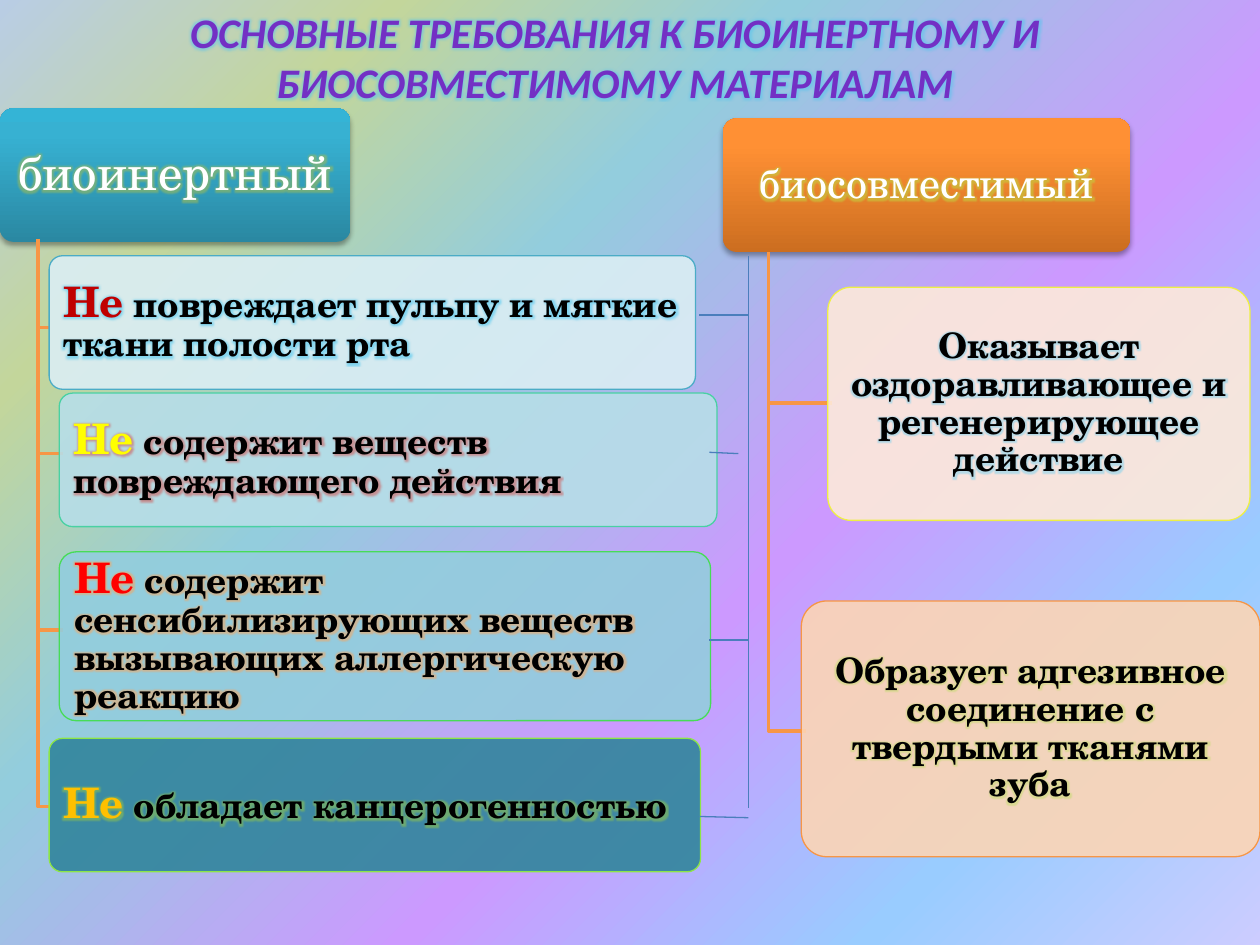
from lxml.etree import SubElement
from pptx import Presentation
from pptx.dml.color import RGBColor
from pptx.enum.shapes import MSO_CONNECTOR as Link, MSO_SHAPE as Shape
from pptx.enum.text import MSO_ANCHOR as Anchor, MSO_AUTO_SIZE as AutoSize, PP_ALIGN as Align
from pptx.oxml.ns import qn
from pptx.util import Inches, Pt

COLORS = {
    "title": "7330C4", "title_glow": "5BC4EE", "white": "FFFFFF", "black": "000000",
    "tree": "F79646", "bracket": "4B7EBC",
}
BACKDROP = [(0, "B9CDE5"), (18, "C3D69B"), (36, "93CDDD"),
            (61, "CC99FF"), (82, "99CCFF"), (100, "CCCCFF")]
TITLE = "ОСНОВНЫЕ ТРЕБОВАНИЯ К БИОИНЕРТНОМУ И БИОСОВМЕСТИМОМУ МАТЕРИАЛАМ"
SERIF, SANS = "TeX Gyre Schola", "Calibri"
COLUMNS, ROWS = 100, 75
CELL = Inches(10) / COLUMNS

BRANCHES = [
    {"name": "биоинертный", "size": 28, "at": (0, 8.6, 27.8, 10.6), "glow": "9BBB59",
     "ramp": [(0, "2A88A2"), (80, "37B1D2"), (100, "34B4D6")],
     "spine": 2.8, "align": Align.LEFT, "inset": 0.8,
     "items": [
         {"at": (3.9, 20.3, 51.3, 10.6), "fill": "DBEEF4", "line": "4BACC6", "glow": "4FC8F0",
          "lead": "C00000", "text": " повреждает пульпу и мягкие ткани полости рта"},
         {"at": (4.7, 31.2, 52.2, 10.6), "fill": "B7DEE8", "line": "49D1A3", "glow": "D0605E",
          "lead": "FFFF00", "text": " содержит веществ повреждающего действия"},
         {"at": (4.7, 43.8, 51.7, 13.4), "fill": "93CDDD", "line": "47DC57", "glow": "F0A868",
          "lead": "FF0000",
          "text": " содержит сенсибилизирующих веществ вызывающих аллергическую реакцию"},
         {"at": (3.9, 58.6, 51.7, 10.6), "fill": "31859C", "line": "8DE646", "glow": "8CC152",
          "lead": "FFC000", "text": " обладает канцерогенностью"},
     ]},
    {"name": "биосовместимый", "size": 24, "at": (57.4, 9.4, 32.3, 10.6), "glow": "C3D040",
     "ramp": [(0, "CC6E20"), (80, "FF9034"), (100, "FF9136")],
     "spine": 60.7, "align": Align.CENTER, "inset": 1,
     "items": [
         {"at": (65.7, 22.8, 33.5, 18.5), "fill": "FDEADA", "line": "EEEF46", "glow": "8CD4EC",
          "text": "Оказывает оздоравливающее и регенерирующее действие"},
         {"at": (63.6, 47.7, 36.4, 20.3), "fill": "FCD5B5", "line": "F79646", "glow": "CBDC78",
          "text": "Образует адгезивное соединение с твердыми тканями зуба"},
     ]},
]
BRACKET = [
    (59.4, 20.3, 59.4, 64.1), (59.4, 25, 55.5, 25), (59.4, 64.9, 55.5, 64.8),
    (58.6, 36, 56.3, 35.9), (59.4, 50.8, 56.3, 50.8),
]


def grid(*values):
    return [round(value * CELL) for value in values]


def rgb(value):
    return RGBColor.from_string(value)


def color_node(parent, value, alpha=None):
    node = SubElement(parent, qn("a:srgbClr"), val=value)
    if alpha:
        SubElement(node, qn("a:alpha"), val=str(alpha * 1000))


def set_gradient(fill, parent, stops, angle):
    fill.gradient()
    gradient = parent.find(qn("a:gradFill"))
    for child in list(gradient):
        gradient.remove(child)
    stop_list = SubElement(gradient, qn("a:gsLst"))
    for position, value in stops:
        color_node(SubElement(stop_list, qn("a:gs"), pos=str(position * 1000)), value)
    SubElement(gradient, qn("a:lin"), ang=str(angle * 60000), scaled="0")


def add_span(para, text, size, color, glow, bold=True, italic=False, face=SERIF):
    span = para.add_run()
    span.text = text
    font = span.font
    font.size, font.bold, font.italic = Pt(size), bold, italic
    font.color.rgb = rgb(color)
    effects = SubElement(font._element, qn("a:effectLst"))
    color_node(SubElement(effects, qn("a:glow"), rad=str(Pt(5))), glow, 60)
    font.name = face


def add_box(page, at, align, inset):
    box = page.shapes.add_shape(Shape.ROUNDED_RECTANGLE, *grid(*at))
    box.adjustments[0] = 0.1
    box.shadow.inherit = False
    frame = box.text_frame
    frame.word_wrap = True
    frame.vertical_anchor = Anchor.MIDDLE
    frame.margin_left, frame.margin_right = grid(inset, inset)
    frame.margin_top, frame.margin_bottom = grid(0.6, 0.6)
    para = frame.paragraphs[0]
    para.alignment, para.line_spacing = align, 0.9
    return box, para


def add_header(page, branch):
    box, para = add_box(page, branch["at"], Align.CENTER, 0.8)
    properties = box._element.spPr
    set_gradient(box.fill, properties, branch["ramp"], 270)
    box.line.fill.background()
    shadow = SubElement(properties.find(qn("a:effectLst")), qn("a:outerShdw"),
                        blurRad=str(Pt(3.1)), dist=str(Pt(1.8)), dir="5400000", rotWithShape="0")
    color_node(shadow, COLORS["black"], 35)
    add_span(para, branch["name"], branch["size"], COLORS["white"], branch["glow"], bold=False)


def add_elbow(page, spine, top, at):
    left, middle = at[0], at[1] + at[3] / 2
    builder = page.shapes.build_freeform(spine, top, scale=CELL)
    builder.add_line_segments([(spine, middle), (left, middle)], close=False)
    elbow = builder.convert_to_shape()
    elbow.shadow.inherit = False
    elbow.fill.background()
    elbow.line.color.rgb = rgb(COLORS["tree"])
    elbow.line.width = Pt(2)


def add_item(page, branch, item):
    box, para = add_box(page, item["at"], branch["align"], branch["inset"])
    box.fill.solid()
    box.fill.fore_color.rgb = rgb(item["fill"])
    tint = box._element.spPr.find(qn("a:solidFill")).find(qn("a:srgbClr"))
    SubElement(tint, qn("a:alpha"), val="90000")
    box.line.color.rgb = rgb(item["line"])
    box.line.width = Pt(0.75)
    if "lead" in item:
        add_span(para, "Не", 24, item["lead"], item["glow"])
    add_span(para, item["text"], 20, COLORS["black"], item["glow"])


def main():
    deck = Presentation()
    deck.slide_width, deck.slide_height = grid(COLUMNS, ROWS)
    page = deck.slides.add_slide(deck.slide_layouts[6])
    fill = page.background.fill
    set_gradient(fill, page._element.cSld.bg.bgPr, BACKDROP, 45)

    title = page.shapes.add_textbox(*grid(2.3, 0, 93, 9.1))
    title.text_frame.word_wrap = True
    title.text_frame.auto_size = AutoSize.SHAPE_TO_FIT_TEXT
    para = title.text_frame.paragraphs[0]
    para.alignment = Align.CENTER
    add_span(para, TITLE, 24, COLORS["title"], COLORS["title_glow"], italic=True, face=SANS)

    for branch in BRANCHES:
        add_header(page, branch)
        bottom = branch["at"][1] + branch["at"][3]
        for item in branch["items"]:
            add_elbow(page, branch["spine"], bottom, item["at"])
            add_item(page, branch, item)

    for ends in BRACKET:
        line = page.shapes.add_connector(Link.STRAIGHT, *grid(*ends))
        line.line.color.rgb = rgb(COLORS["bracket"])
        line.line.width = Pt(0.75)
        SubElement(line._element.spPr, qn("a:effectLst"))

    deck.save("out.pptx")


if __name__ == "__main__":
    main()
